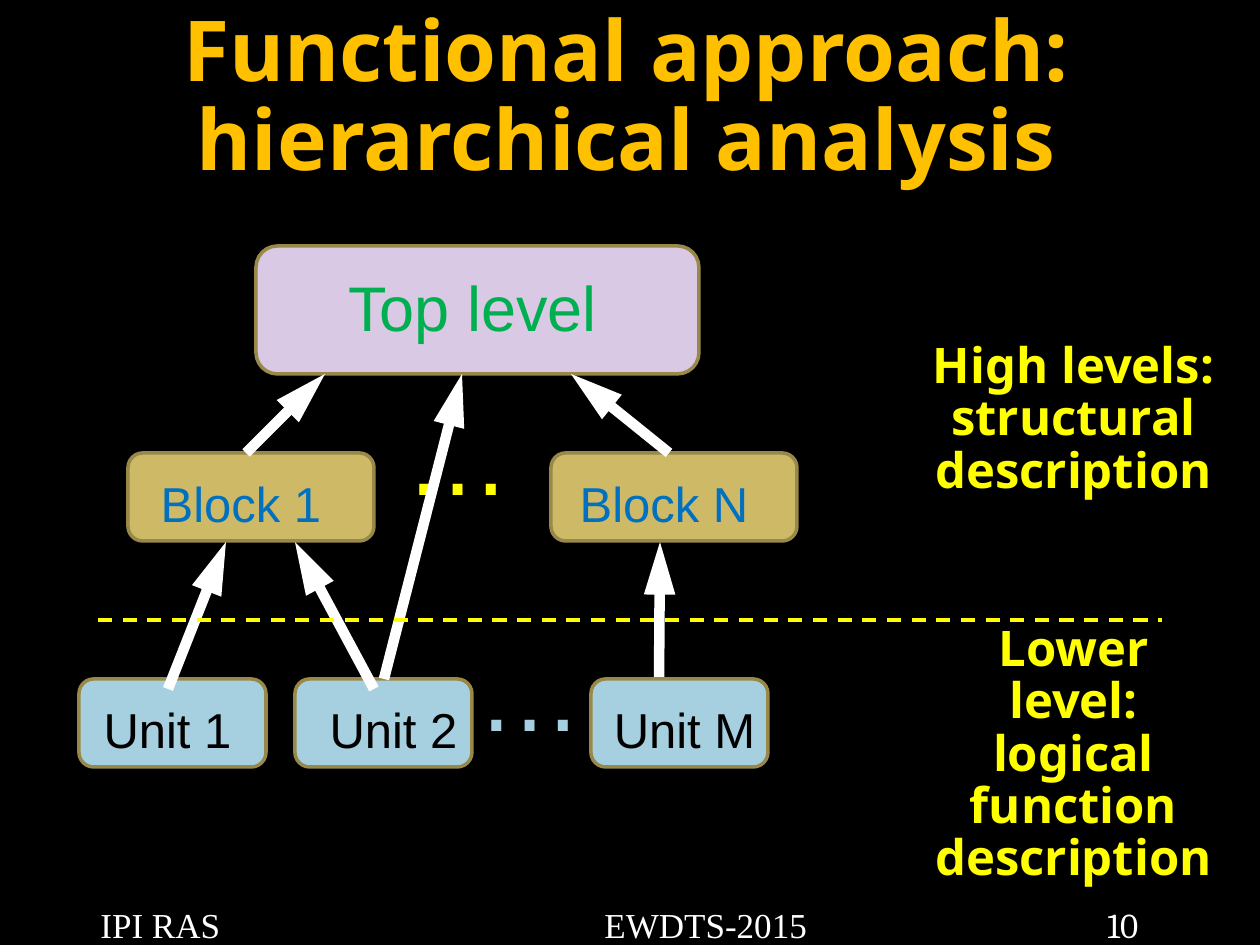
import pptx
import pptx.util
import pptx.dml.color
import pptx.enum.dml
import pptx.enum.shapes
import pptx.enum.text
import pptx.oxml.ns
import lxml.etree

RGB = pptx.dml.color.RGBColor
BLACK = RGB(0x00, 0x00, 0x00)
WHITE = RGB(0xFF, 0xFF, 0xFF)
GOLD = RGB(0xFF, 0xC0, 0x00)
YELLOW = RGB(0xFF, 0xFF, 0x00)
GREEN = RGB(0x00, 0xB0, 0x50)
BLUE = RGB(0x00, 0x70, 0xC0)
LILAC = RGB(0xDA, 0xC9, 0xE4)
SAND = RGB(0xCE, 0xB9, 0x66)
SKY = RGB(0xA6, 0xD0, 0xDF)
EDGE = RGB(0x98, 0x89, 0x4B)

HEAD, BODY, FOOT, DIGIT = "Noto Sans", "Arial", "Times New Roman", "Cambria"
ALIGN = pptx.enum.text.PP_ALIGN
ANCHOR = pptx.enum.text.MSO_ANCHOR
SCALE = 914400 / 126


def emu(*lengths):
    return [round(n * SCALE) for n in lengths]


def add_tag(parent, tag, **attrs):
    return lxml.etree.SubElement(parent, pptx.oxml.ns.qn(tag), attrs)


class Page:
    """Holds the current slide and draws each kind of element on it."""

    def __init__(self, deck):
        self.slide = deck.slides.add_slide(deck.slide_layouts[5])
        self.shapes = self.slide.shapes
        fill = self.slide.background.fill
        fill.solid()
        fill.fore_color.rgb = BLACK

    def style(self, par, font, size, color, bold=False, align=ALIGN.CENTER):
        par.alignment = align
        par.font.name = font
        par.font.size = pptx.util.Pt(size)
        par.font.color.rgb = color
        par.font.bold = bold

    def label(self, shape, text, font, size, color, bold=False, anchor=ANCHOR.TOP):
        frame = shape.text_frame
        frame.word_wrap = True
        frame.auto_size = pptx.enum.text.MSO_AUTO_SIZE.NONE
        frame.vertical_anchor = anchor
        frame.text = text
        self.style(frame.paragraphs[0], font, size, color, bold)
        return frame

    def head(self, shape, text, size, color):
        """Set bold text in the heading face, tight and centred."""
        frame = self.label(shape, text, HEAD, size, color, True, ANCHOR.MIDDLE)
        frame.paragraphs[0].line_spacing = 0.89
        frame.margin_left = frame.margin_right = emu(14)[0]

    def title(self, text, *place):
        shape = self.shapes.title
        shape.left, shape.top, shape.width, shape.height = emu(*place)
        self.head(shape, text, 48, GOLD)

    def note(self, text, *place):
        self.head(self.shapes.add_textbox(*emu(*place)), text, 28, YELLOW)

    def dots(self, color, *place):
        self.label(self.shapes.add_textbox(*emu(*place)), "…", BODY, 60, color)

    def box(self, text, size, color, fill, shift, *place):
        """Draw a rounded box whose label sits shift px right of its centre."""
        shape = self.shapes.add_shape(
            pptx.enum.shapes.MSO_SHAPE.ROUNDED_RECTANGLE, *emu(*place))
        shape.shadow.inherit = False
        shape.fill.solid()
        shape.fill.fore_color.rgb = fill
        shape.line.color.rgb = EDGE
        shape.line.width = pptx.util.Pt(2)
        frame = self.label(shape, text, BODY, size, color)
        frame.margin_top, frame.margin_left, frame.margin_right = emu(
            16, max(2 * shift, 0), max(-2 * shift, 0))

    def line(self, color, width, *ends):
        link = self.shapes.add_connector(
            pptx.enum.shapes.MSO_CONNECTOR.STRAIGHT, *emu(*ends))
        link.line.color.rgb = color
        link.line.width = pptx.util.Pt(width)
        add_tag(link._element.spPr, "a:effectLst")
        return link.line

    def arrow(self, *ends):
        line = self.line(WHITE, 6, *ends)
        add_tag(line._get_or_add_ln(), "a:tailEnd", type="triangle", w="med", len="lg")

    def foot(self, parts, stops, number, *place):
        """Set tabbed footer parts, then the page number in its own face."""
        shape = self.shapes.add_textbox(*emu(*place))
        shape.text_frame.word_wrap = True
        par = shape.text_frame.paragraphs[0]
        tabs = add_tag(par._p.get_or_add_pPr(), "a:tabLst")
        for stop in emu(*stops):
            add_tag(tabs, "a:tab", pos=str(stop), algn="l")
        self.style(par, FOOT, 20, WHITE, align=ALIGN.LEFT)
        par.add_run().text = "\t".join(parts) + "\t"
        run = par.add_run()
        run.text = number
        run.font.name = DIGIT


def main():
    deck = pptx.Presentation()
    deck.slide_width, deck.slide_height = emu(1260, 945)
    page = Page(deck)

    page.title("Functional approach: hierarchical analysis", 59, 20, 1134, 158)
    page.note("High levels: structural description", 916, 325, 315, 190)
    page.foot(["IPI RAS", "EWDTS-2015"], [504, 1007], "10", 88, 897, 1113, 48)
    page.note("Lower level: logical function description", 916, 630, 315, 251)
    page.dots(YELLOW, 393, 384, 118, 190)

    page.arrow(659, 689, 660, 542)
    page.box("Top level", 36, GREEN, LILAC, -5, 256, 246, 443, 128)
    for name, left in [("Block 1", 128), ("Block N", 551)]:
        page.box(name, 28, BLUE, SAND, -10, left, 453, 246, 88)
    for name, shift, left, width in [
            ("Unit 1", -5, 79, 187), ("Unit 2", 10, 295, 177), ("Unit M", 5, 591, 177)]:
        page.box(name, 28, BLACK, SKY, shift, left, 679, width, 88)
    page.dots(SKY, 462, 620, 137, 190)

    for ends in [(168, 689, 226, 542), (384, 679, 462, 374), (374, 689, 295, 542),
                 (246, 453, 325, 374), (669, 453, 571, 374)]:
        page.arrow(*ends)
    split = page.line(YELLOW, 2, 98, 620, 1162, 620)
    split.dash_style = pptx.enum.dml.MSO_LINE.DASH

    deck.save("out.pptx")


if __name__ == "__main__":
    main()
